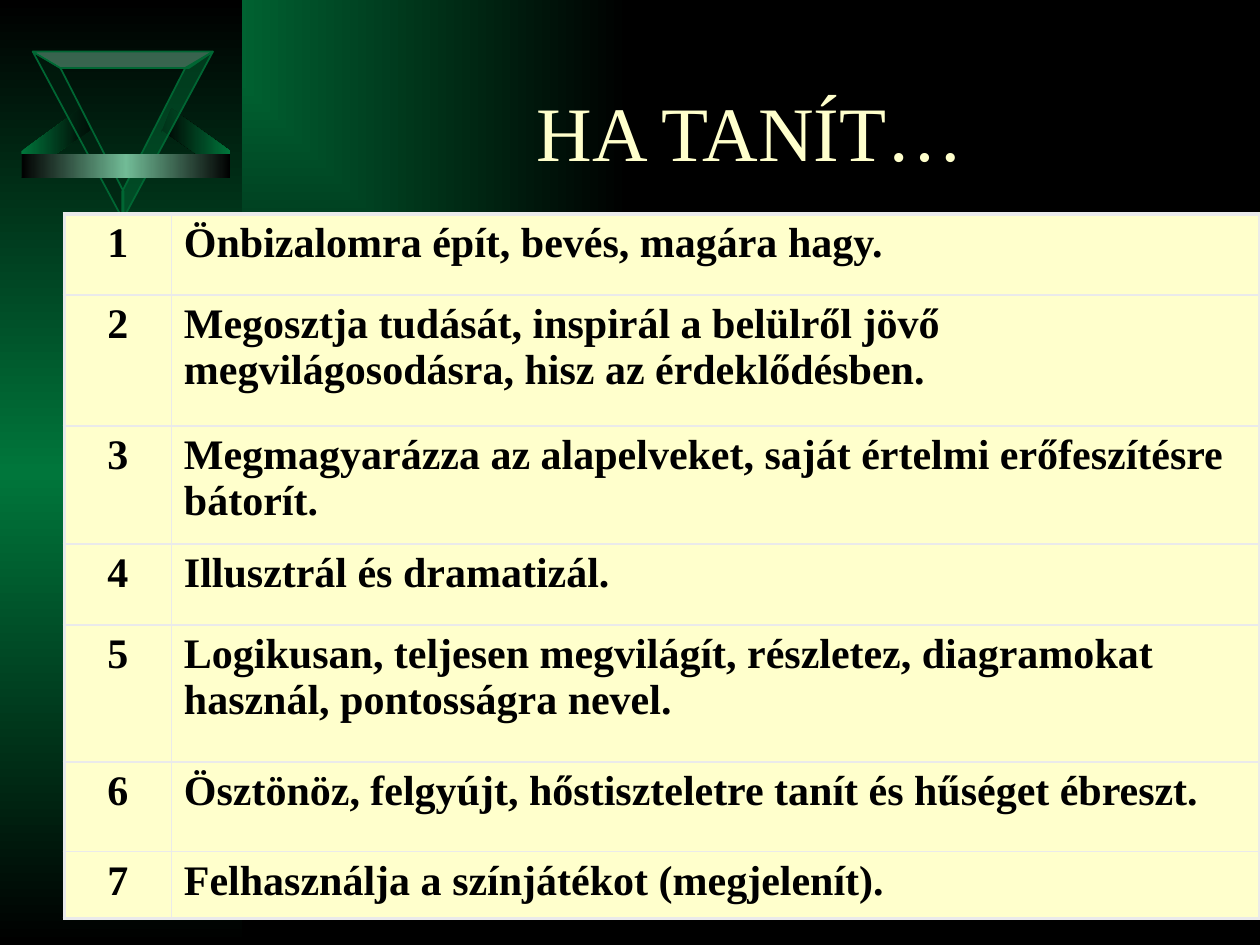
from pptx import Presentation
from pptx.dml.color import RGBColor
from pptx.enum.shapes import MSO_SHAPE as SHAPE
from pptx.enum.text import MSO_ANCHOR as ANCHOR, PP_ALIGN as ALIGN
from pptx.oxml import parse_xml
from pptx.oxml.ns import qn
from pptx.util import Inches, Pt

TITLE = "HA TANÍT…"
ROWS = [  # row height in inches, sentence
    (0.64, "Önbizalomra épít, bevés, magára hagy."),
    (1.04, "Megosztja tudását, inspirál a belülről jövő megvilágosodásra, "
           "hisz az érdeklődésben."),
    (0.94, "Megmagyarázza az alapelveket, saját értelmi erőfeszítésre bátorít."),
    (0.64, "Illusztrál és dramatizál."),
    (1.09, "Logikusan, teljesen megvilágít, részletez, diagramokat használ, "
           "pontosságra nevel."),
    (0.71, "Ösztönöz, felgyújt, hőstiszteletre tanít és hűséget ébreszt."),
    (0.53, "Felhasználja a színjátékot (megjelenít)."),
]
COLUMNS = (0.85, 8.64)

FONT = "Times New Roman"
BLACK = RGBColor(0x00, 0x00, 0x00)
GREEN = RGBColor(0x00, 0x76, 0x3B)
EDGE_GREEN = RGBColor(0x00, 0x66, 0x33)
DARK_GREEN = RGBColor(0x00, 0x20, 0x10)
MINT = RGBColor(0x71, 0xBB, 0x96)
CREAM = RGBColor(0xFF, 0xFF, 0xCC)
RULE_GRAY = RGBColor(0xEA, 0xEA, 0xEA)

# Emblem outlines in hundredths of an inch
LEFT_WING = [(17, 120), (17, 141), (72, 103), (72, 105), (64, 86)]
LEFT_SIDE = [(98, 175), (98, 152), (48, 54), (26, 41)]
TOP_SIDE = [(26, 41), (48, 54), (150, 54), (169, 41)]

XMLNS = 'xmlns:a="http://schemas.openxmlformats.org/drawingml/2006/main"'
ACROSS = '<a:lin ang="0" scaled="1"/>'
DOWN = '<a:lin ang="5400000" scaled="1"/>'
FROM_CORNER = '<a:path path="rect"><a:fillToRect r="100000" b="100000"/></a:path>'


def set_gradient(fill, holder, colors, direction):
    """Fill with evenly spaced colour stops."""
    fill.solid()
    step = 100000 // (len(colors) - 1)
    stops = "".join(f'<a:gs pos="{i * step}"><a:srgbClr val="{color}"/></a:gs>'
                    for i, color in enumerate(colors))
    gradient = parse_xml(f'<a:gradFill {XMLNS} rotWithShape="1">'
                         f'<a:gsLst>{stops}</a:gsLst>{direction}</a:gradFill>')
    holder.replace(holder.find(qn("a:solidFill")), gradient)


def mirror(points, width):
    return [(width - x, y) for x, y in points]


def add_outline(points):
    builder = slide.shapes.build_freeform(*points[0], scale=Inches(0.01))
    builder.add_line_segments(points[1:], close=True)
    outline = builder.convert_to_shape()
    outline.shadow.inherit = False
    outline.line.fill.background()
    return outline


def add_gradient_bar(left, top, width, height, colors, direction):
    bar = slide.shapes.add_shape(SHAPE.RECTANGLE, Inches(left), Inches(top),
                                 Inches(width), Inches(height))
    bar.shadow.inherit = False
    bar.line.fill.background()
    set_gradient(bar.fill, bar._element.spPr, colors, direction)


def set_borders(cell, widths):
    for i, (side, width) in enumerate(zip("LRTB", widths)):
        border = parse_xml(
            f'<a:ln{side} {XMLNS} w="{Pt(width)}"><a:solidFill>'
            f'<a:srgbClr val="{RULE_GRAY}"/></a:solidFill></a:ln{side}>')
        cell._tc.get_or_add_tcPr().insert(i, border)


def style_text(paragraph, size, color, align, bold=False):
    paragraph.alignment = align
    font = paragraph.font
    font.name, font.size, font.bold = FONT, Pt(size), bold
    font.color.rgb = color


prs = Presentation()
prs.slide_width, prs.slide_height = Inches(10), Inches(7.5)
slide = prs.slides.add_slide(prs.slide_layouts[6])

# Background and left band
background = slide.background.fill
background.solid()
set_gradient(background, slide._element.cSld.find(qn("p:bg"))[0],
             (GREEN, BLACK), FROM_CORNER)
add_gradient_bar(0, 0, 1.92, 7.5, (BLACK, GREEN, BLACK), DOWN)

# Triangle emblem
for points, colors in ((mirror(LEFT_WING, 200), (BLACK, GREEN)),
                       (LEFT_WING, (GREEN, BLACK))):
    wing = add_outline(points)
    set_gradient(wing.fill, wing._element.spPr, colors, ACROSS)
for points, color in ((LEFT_SIDE, DARK_GREEN), (TOP_SIDE, MINT),
                      (mirror(LEFT_SIDE, 195), EDGE_GREEN)):
    side = add_outline(points)
    side.fill.solid()
    side.fill.fore_color.rgb = color
    tint = side._element.spPr.find(qn("a:solidFill"))[0]
    tint.append(parse_xml(f'<a:alpha {XMLNS} val="50000"/>'))
    side.line.color.rgb = EDGE_GREEN
    side.line.width = Pt(1)
add_gradient_bar(0.17, 1.22, 1.66, 0.19, (BLACK, MINT, BLACK), ACROSS)

# Title
title = slide.shapes.add_textbox(Inches(2.08), Inches(0.25),
                                 Inches(7.75), Inches(1.58)).text_frame
title.word_wrap = True
title.vertical_anchor = ANCHOR.MIDDLE
title.text = TITLE
style_text(title.paragraphs[0], 44, CREAM, ALIGN.CENTER)

# Numbered table
table = slide.shapes.add_table(
    len(ROWS), len(COLUMNS), Inches(0.51), Inches(1.7), Inches(sum(COLUMNS)),
    Inches(sum(height for height, _ in ROWS))).table
table.first_row = table.horz_banding = False
for column, width in zip(table.columns, COLUMNS):
    column.width = Inches(width)
last_row, last_column = len(ROWS) - 1, len(COLUMNS) - 1
for r, (height, sentence) in enumerate(ROWS):
    table.rows[r].height = Inches(height)
    for c, text in enumerate((str(r + 1), sentence)):
        cell = table.cell(r, c)
        cell.text = text
        style_text(cell.text_frame.paragraphs[0], 24, BLACK,
                   ALIGN.LEFT if c else ALIGN.CENTER, bold=True)
        cell.fill.solid()
        cell.fill.fore_color.rgb = CREAM
        outer = (c == 0, c == last_column, r == 0, r == last_row)
        set_borders(cell, [2.25 if edge else 1 for edge in outer])

prs.save("out.pptx")
